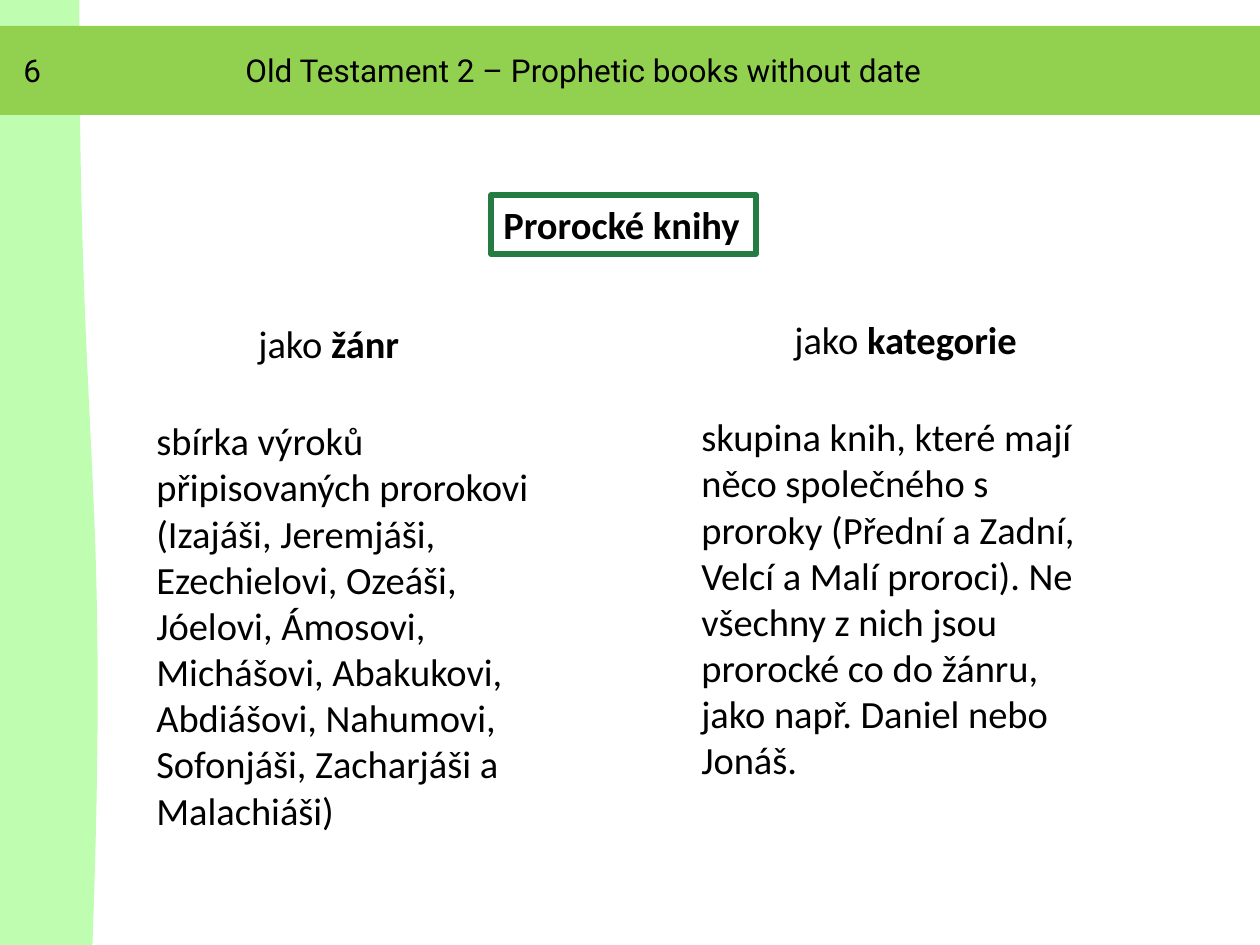
from pptx import Presentation
from pptx.dml.color import RGBColor
from pptx.enum.shapes import MSO_SHAPE
from pptx.enum.text import MSO_ANCHOR, MSO_AUTO_SIZE, PP_ALIGN
from pptx.util import Emu, Pt

RECT, WAVE = MSO_SHAPE.RECTANGLE, MSO_SHAPE.FLOWCHART_DOCUMENT
TOP, LEFT, GROW = MSO_ANCHOR.TOP, PP_ALIGN.LEFT, MSO_AUTO_SIZE.SHAPE_TO_FIT_TEXT
SCALE = 914400 / 126
W, H = 1260, 945
LINE_H = 59  # height of a one-line 22 pt box
GREEN, PALE, DARK, BLACK = "92D050", "BFFDB1", "247C43", "000000"


def px(*values):
    return [Emu(round(v * SCALE)) for v in values]


def rgb(value):
    return RGBColor.from_string(value)


def add_box(slide, box, fill=None, line=None, kind=RECT):
    sp = slide.shapes.add_shape(kind, *px(*box))
    sp.shadow.inherit = False
    if fill:
        sp.fill.solid()
        sp.fill.fore_color.rgb = rgb(fill)
    else:
        sp.fill.background()
    if line:
        sp.line.color.rgb = rgb(line)
        sp.line.width = Pt(3)
    else:
        sp.line.fill.background()
    return sp


def write(sp, runs, size=22, font="Calibri", wrap=False):
    """Fill a shape with one paragraph of (text, bold) runs."""
    tf = sp.text_frame
    tf.word_wrap = wrap
    tf.auto_size = GROW
    tf.vertical_anchor = TOP
    p = tf.paragraphs[0]
    p.alignment = LEFT
    for text, bold in runs:
        r = p.add_run()
        r.text = text
        r.font.size = Pt(size)
        r.font.name = font
        r.font.bold = bold
        r.font.color.rgb = rgb(BLACK)


def add_text(slide, box, runs, **style):
    write(slide.shapes.add_textbox(*px(*box)), runs, **style)


def add_side_wave(slide, x, y, w, h):
    # Turned a quarter, so width and height swap around the centre
    sp = add_box(slide, (x + (w - h) / 2, y + (h - w) / 2, h, w), PALE, kind=WAVE)
    sp.rotation = 270


def add_header(slide, x, y, w, h, number, title):
    add_box(slide, (x, y, w, h), GREEN)
    sp = add_box(slide, (x + 268, y + 19, 1027, 50), GREEN)
    write(sp, [(title, False)], size=18, font="Roboto", wrap=True)
    add_text(slide, (x + 46, y + 19, 39, 50), [(number, False)], size=18, font="Roboto")


def add_column(slide, x, y, w, h, head_dx, head_w, head, body):
    add_text(slide, (x + head_dx, y, head_w, LINE_H), [("jako ", False), (head, True)])
    add_text(slide, (x, y + 97, w, h - 97), [(body, False)], wrap=True)


def main():
    prs = Presentation()
    prs.slide_width, prs.slide_height = px(W, H)
    slide = prs.slides.add_slide(prs.slide_layouts[6])

    # Background and header
    add_side_wave(slide, 0, 0, 99, H)
    add_header(slide, -35, 26, 1389, 89, "6",
               "Old Testament 2 – Prophetic books without date")

    # Topic
    topic = add_box(slide, (491, 195, 265, LINE_H), line=DARK)
    write(topic, [("Prorocké knihy", True)])

    # Two meanings
    add_column(slide, 144, 314, 417, 529, 102, 168, "žánr",
               "sbírka výroků připisovaných prorokovi (Izajáši, Jeremjáši, "
               "Ezechielovi, Ozeáši, Jóelovi, Ámosovi, Michášovi, Abakukovi, "
               "Abdiášovi, Nahumovi, Sofonjáši, Zacharjáši a Malachiáši)")
    add_column(slide, 689, 310, 417, 483, 93, 251, "kategorie",
               "skupina knih, které mají něco společného s proroky (Přední a "
               "Zadní, Velcí a Malí proroci). Ne všechny z nich jsou prorocké "
               "co do žánru, jako např. Daniel nebo Jonáš.")

    prs.save("out.pptx")


if __name__ == "__main__":
    main()
